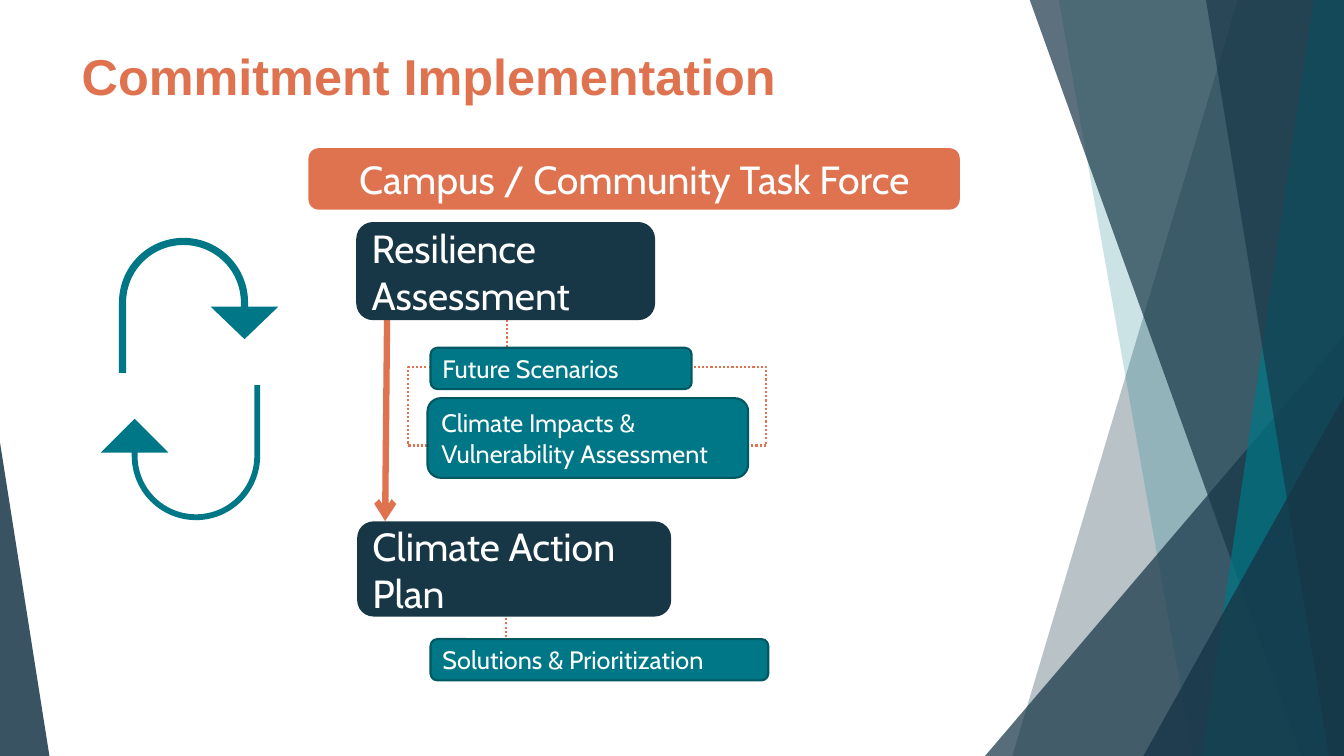
from lxml import etree
from pptx import Presentation
from pptx import util as u
from pptx.dml.color import RGBColor
from pptx.enum import dml, shapes, text
from pptx.oxml.ns import qn

PX = 9144  # 100 px to the inch
NAVY = RGBColor(0x17, 0x36, 0x47)
BOX_NAVY = RGBColor(0x17, 0x36, 0x46)
TEAL = RGBColor(0x00, 0x77, 0x86)
DARK_TEAL = RGBColor(0x00, 0x58, 0x63)
ORANGE = RGBColor(0xDF, 0x73, 0x50)
WHITE = RGBColor(0xFF, 0xFF, 0xFF)
KIND = shapes.MSO_SHAPE

presentation = Presentation()
presentation.slide_width, presentation.slide_height = 1333 * PX, 750 * PX
slide = presentation.slides.add_slide(presentation.slide_layouts[5])


def paint(shape, color, opacity=100):
    """Fill without outline or shadow; opacity in percent."""
    shape.shadow.inherit = False
    shape.line.fill.background()
    shape.fill.solid()
    shape.fill.fore_color.rgb = color
    if opacity < 100:
        color_element = shape.fill._xPr.find(qn("a:solidFill"))[0]
        etree.SubElement(color_element, qn("a:alpha"), val=str(opacity * 1000))


def add_shape(kind, left, top, width, height, adjustments=()):
    shape = slide.shapes.add_shape(kind, left * PX, top * PX, width * PX, height * PX)
    for index, value in enumerate(adjustments):
        shape.adjustments[index] = value
    return shape


# Facets on both edges: a band is (top x, bottom x) running to the right edge,
# a triangle is (left, top, width, height, apex)
facets = [
    ((1228, 1004), NAVY, 30),
    ((1050, 1183), TEAL, 20),
    ((977, 333, 356, 417, 1), NAVY, 72),
    ((1021, 1291), NAVY, 70),
    ((1303, 1192), TEAL, 70),
    ((1196, 1318), NAVY, 65),
    ((1134, 393, 199, 357, 1), NAVY, 80),
    ((0, 439, 49, 311, 0), NAVY, 85),
]
for geometry, color, opacity in facets:
    if len(geometry) == 2:
        top_x, bottom_x = geometry
        builder = slide.shapes.build_freeform(top_x, -1, scale=PX)
        builder.add_line_segments([(1333, -1), (1333, 750), (bottom_x, 750)])
        facet = builder.convert_to_shape()
    else:
        facet = add_shape(KIND.ISOSCELES_TRIANGLE, *geometry[:4], geometry[4:])
    paint(facet, color, opacity)

title = slide.shapes.title
title.left, title.top, title.width, title.height = 71 * PX, 40 * PX, 867 * PX, 144 * PX
title.text_frame.text = "Commitment Implementation"
title.text_frame.vertical_anchor = text.MSO_ANCHOR.TOP
title_paragraph = title.text_frame.paragraphs[0]
title_paragraph.alignment = text.PP_ALIGN.LEFT
title_font = title_paragraph.runs[0].font
title_font.name, title_font.size, title_font.bold = "Arial", u.Pt(36), True
title_font.color.rgb = ORANGE

# Dotted links, the loop around the assessment steps and the main arrow
loop = add_shape(KIND.RECTANGLE, 405, 364, 355, 78)
loop.shadow.inherit = False
loop.fill.background()
dotted = [loop]
connectors = []
for ends in [(502, 559, 502, 669), (503, 267, 503, 377), (384, 309, 382, 517)]:
    connector = slide.shapes.add_connector(
        shapes.MSO_CONNECTOR.STRAIGHT, *(end * PX for end in ends))
    etree.SubElement(connector._element.spPr, qn("a:effectLst"))
    connectors.append(connector)
arrow = connectors.pop()
dotted += connectors
for outline in dotted:
    outline.line.color.rgb = ORANGE
    outline.line.width = u.Pt(1.5)
    outline.line.dash_style = dml.MSO_LINE.ROUND_DOT
arrow.line.color.rgb = ORANGE
arrow.line.width = u.Pt(4.5)
etree.SubElement(arrow.line._get_or_add_ln(), qn("a:tailEnd"), type="arrow")

# Style: fill, outline, outline width, text size, alignment
STAGE = (BOX_NAVY, BOX_NAVY, 1, 28, text.PP_ALIGN.LEFT)
STEP = (TEAL, DARK_TEAL, 1.5, 18, text.PP_ALIGN.LEFT)
BANNER = (ORANGE, None, 0, 28, text.PP_ALIGN.CENTER)
boxes = [
    ("Resilience Assessment", (354, 221, 295, 96), STAGE),
    ("Future Scenarios", (427, 345, 259, 41), STEP),
    ("Climate Impacts & Vulnerability Assessment", (424, 395, 318, 79), STEP),
    ("Climate Action Plan", (355, 518, 310, 93), STAGE),
    ("Campus / Community Task Force", (306, 147, 646, 61), BANNER),
    ("Solutions & Prioritization", (427, 634, 335, 41), STEP),
]
for label, place, (fill, outline, outline_width, size, alignment) in boxes:
    box = add_shape(KIND.ROUNDED_RECTANGLE, *place)
    paint(box, fill)
    if outline is not None:
        box.line.color.rgb = outline
        box.line.width = u.Pt(outline_width)
    frame = box.text_frame
    frame.text = label
    frame.word_wrap = True
    frame.vertical_anchor = text.MSO_ANCHOR.MIDDLE
    paragraph = frame.paragraphs[0]
    paragraph.alignment = alignment
    font = paragraph.runs[0].font
    font.name, font.size = "Cabin", u.Pt(size)
    font.color.rgb = WHITE

# Cycle arrows
cycle = [
    (118, 236, 0, (0.053, 0.25, 0.24, 0.529, 0.75)),
    (100, 382, 180, (0.043, 0.25, 0.25, 0.5, 0.75)),
]
for left, top, rotation, adjustments in cycle:
    turn = add_shape(KIND.U_TURN_ARROW, left, top, 158, 134, adjustments)
    turn.rotation = rotation
    paint(turn, TEAL)

presentation.save("out.pptx")
